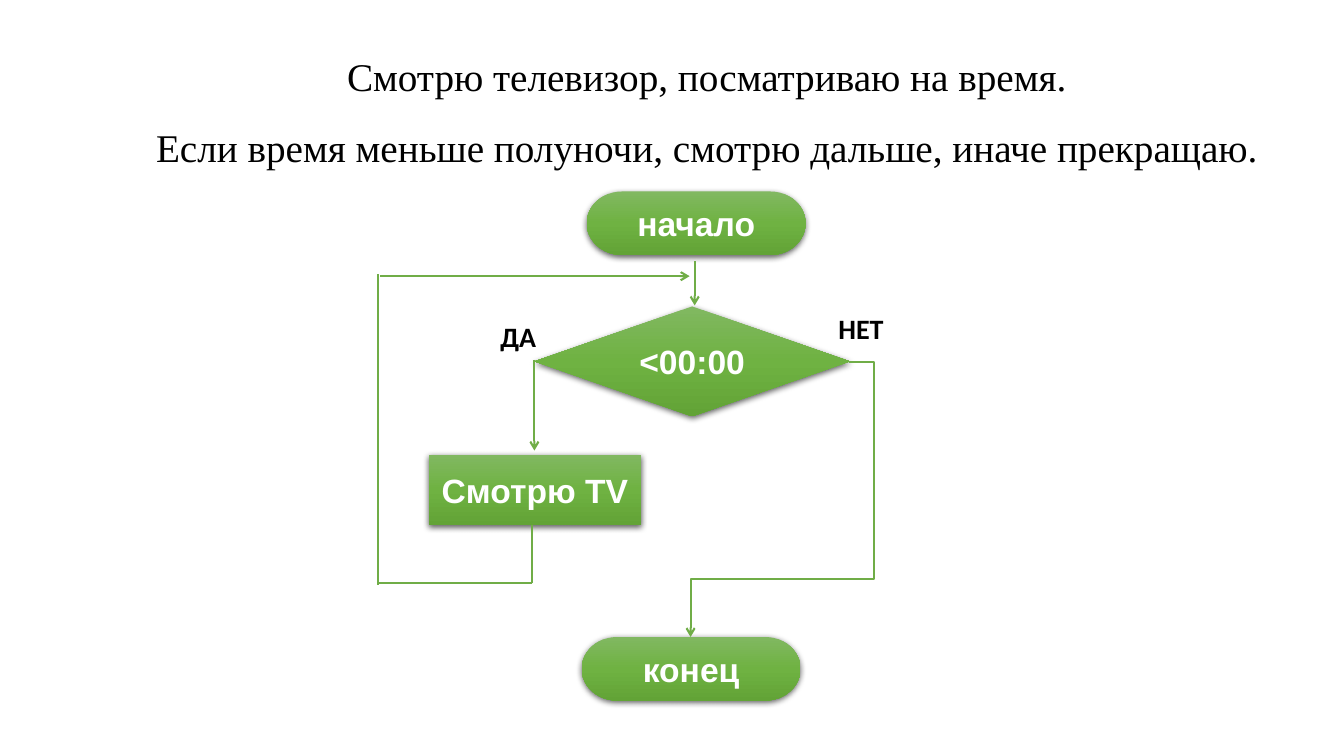
from dataclasses import dataclass

from lxml.etree import SubElement
from pptx import Presentation
from pptx.dml.color import RGBColor
from pptx.enum.shapes import MSO_CONNECTOR, MSO_SHAPE
from pptx.enum.text import MSO_ANCHOR, PP_ALIGN
from pptx.oxml import parse_xml
from pptx.oxml.ns import nsdecls, qn
from pptx.util import Inches, Pt


@dataclass(frozen=True)
class Theme:
    gradient: tuple = ((0, "81B861"), (50, "6FB242"), (100, "62A336"))
    line: str = "70AD47"
    text: str = "000000"
    block_text: str = "FFFFFF"
    title_size: int = 28
    block_size: int = 24
    label_size: int = 20
    line_width: float = 1.5


THEME = Theme()


def write_lines(tf, lines, font, size, color, bold=False, spacing=None):
    tf.word_wrap = True
    tf.text = "\n".join(lines)
    for p in tf.paragraphs:
        p.alignment = PP_ALIGN.CENTER
        p.line_spacing = spacing
        for r in p.runs:
            r.font.name = font
            r.font.size = Pt(size)
            r.font.bold = bold
            r.font.color.rgb = RGBColor.from_string(color)


def add_text(slide, box, lines, **style):
    sp = slide.shapes.add_textbox(*map(Inches, box))
    write_lines(sp.text_frame, lines, color=THEME.text, **style)


def add_label(slide, box, text):
    add_text(slide, box, [text], font="Calibri", size=THEME.label_size, bold=True)


def add_block(slide, kind, box, text):
    """Add a flowchart block with a vertical gradient and a soft shadow."""
    sp = slide.shapes.add_shape(kind, *map(Inches, box))
    sp.line.fill.background()
    sp.shadow.inherit = False
    stops = "".join(
        f'<a:gs pos="{pos * 1000}"><a:srgbClr val="{color}"/></a:gs>'
        for pos, color in THEME.gradient
    )
    props = sp._element.spPr
    props.find(qn("a:ln")).addprevious(parse_xml(
        f'<a:gradFill {nsdecls("a")} rotWithShape="1"><a:gsLst>{stops}</a:gsLst>'
        '<a:lin ang="5400000" scaled="0"/></a:gradFill>'
    ))
    props.find(qn("a:effectLst")).append(parse_xml(
        f'<a:outerShdw {nsdecls("a")} blurRad="{Pt(4.5)}" dist="{Pt(1.5)}" '
        'dir="5400000" algn="ctr" rotWithShape="0"><a:srgbClr val="000000">'
        '<a:alpha val="63000"/></a:srgbClr></a:outerShdw>'
    ))
    tf = sp.text_frame
    tf.vertical_anchor = MSO_ANCHOR.MIDDLE
    tf.margin_left = tf.margin_right = Inches(0.08)
    tf.margin_top = tf.margin_bottom = Inches(0.04)
    write_lines(tf, [text], "Arial", THEME.block_size, THEME.block_text, bold=True)


def add_line(slide, start, end, arrow=False, kind=MSO_CONNECTOR.STRAIGHT):
    line = slide.shapes.add_connector(kind, *map(Inches, (*start, *end)))
    line.line.color.rgb = RGBColor.from_string(THEME.line)
    line.line.width = Pt(THEME.line_width)
    props = line._element.spPr
    if arrow:
        SubElement(props.find(qn("a:ln")), qn("a:tailEnd"), type="arrow")
    SubElement(props, qn("a:effectLst"))
    return line


def add_bent_arrow(slide, start, end, adjustments):
    """Add an arrow with three bends, placed by fractions of its width and height."""
    line = add_line(slide, start, end, arrow=True, kind=MSO_CONNECTOR.ELBOW)
    geometry = line._element.spPr.find(qn("a:prstGeom"))
    geometry.set("prst", "bentConnector4")
    guides = geometry.find(qn("a:avLst"))
    for number, value in enumerate(adjustments, 1):
        SubElement(guides, qn("a:gd"), name=f"adj{number}",
                   fmla=f"val {round(value * 100000)}")


def main():
    prs = Presentation()
    prs.slide_width, prs.slide_height = Inches(13.33), Inches(7.5)
    slide = prs.slides.add_slide(prs.slide_layouts[6])

    add_text(slide, (1.36, 0.24, 11.3, 1.51),
             ["Смотрю телевизор, посматриваю на время.",
              "Если время меньше полуночи, смотрю дальше, иначе прекращаю."],
             font="Times New Roman", size=THEME.title_size, spacing=1.5)

    for kind, box, text in (
        (MSO_SHAPE.FLOWCHART_TERMINATOR, (5.82, 1.9, 2.17, 0.63), "начало"),
        (MSO_SHAPE.FLOWCHART_PROCESS, (4.25, 4.51, 2.11, 0.7), "Смотрю TV"),
        (MSO_SHAPE.FLOWCHART_TERMINATOR, (5.77, 6.32, 2.17, 0.63), "конец"),
        (MSO_SHAPE.FLOWCHART_DECISION, (5.3, 3.04, 3.13, 1.09), "<00:00"),
    ):
        add_block(slide, kind, box, text)

    add_label(slide, (4.83, 3.12, 0.62, 0.44), "ДА")
    add_label(slide, (8.11, 3.04, 0.86, 0.44), "НЕТ")

    add_bent_arrow(slide, (8.42, 3.59), (6.85, 6.32), (-0.16, 0.79))
    for start, end, arrow in (
        ((6.89, 2.59), (6.89, 3.03), True),
        ((5.3, 3.57), (5.3, 4.47), True),
        ((5.28, 5.21), (5.28, 5.78), False),
        ((5.28, 5.78), (3.74, 5.78), False),
        ((3.75, 5.8), (3.75, 2.72), False),
        ((3.77, 2.74), (6.84, 2.74), True),
    ):
        add_line(slide, start, end, arrow)

    prs.save("out.pptx")


if __name__ == "__main__":
    main()
